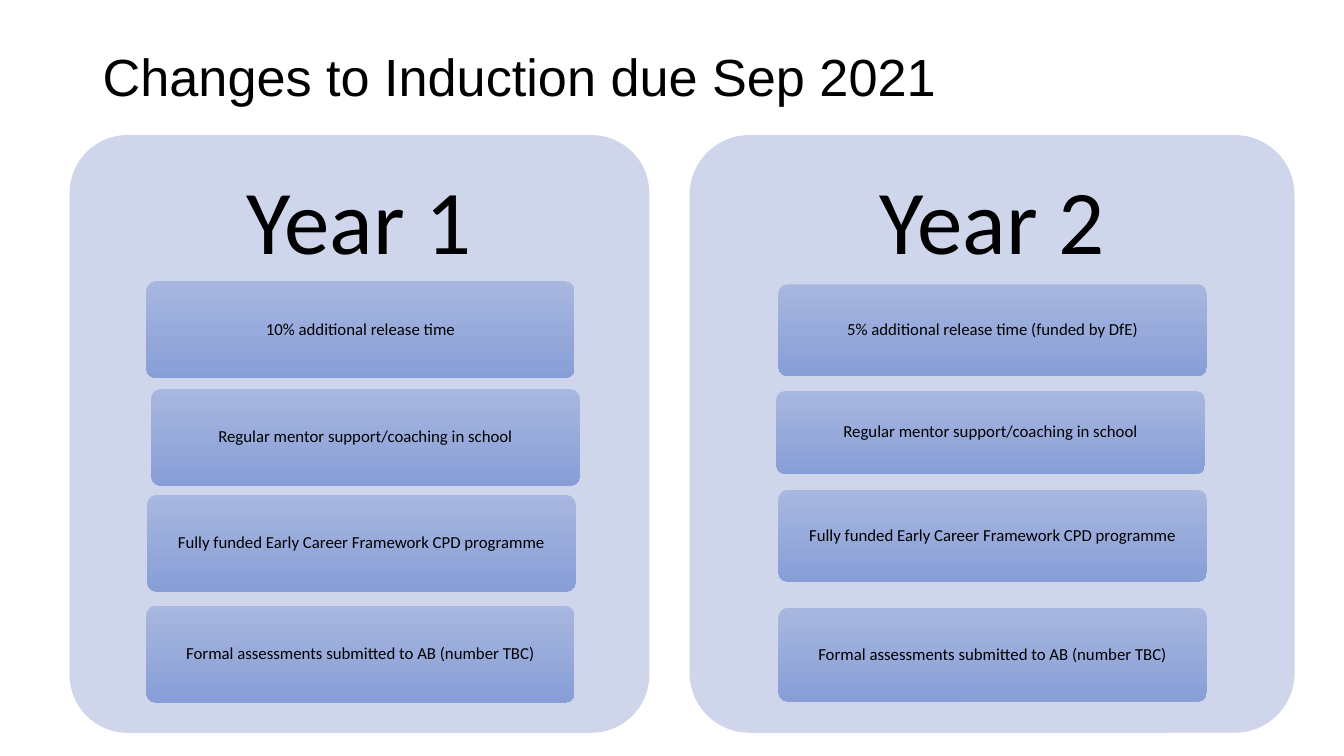
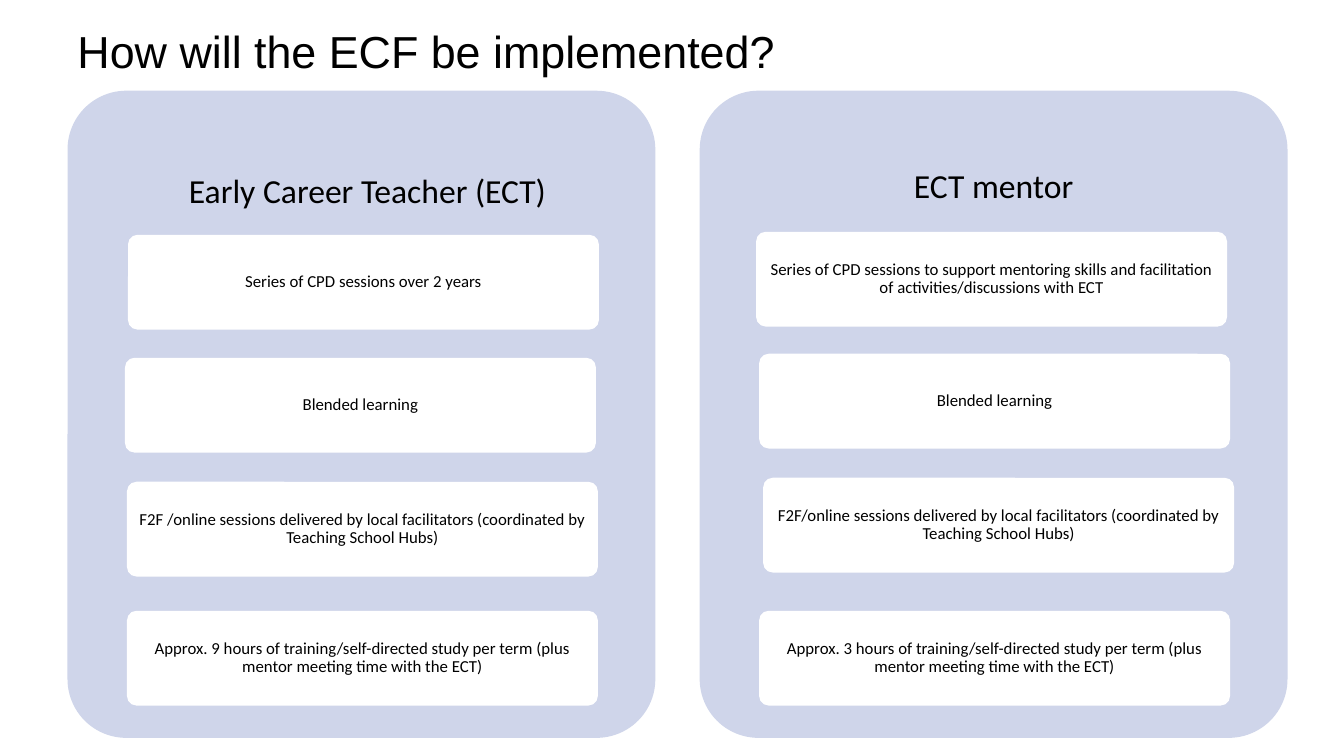
from pptx import Presentation
from pptx.dml.color import RGBColor
from pptx.enum.shapes import MSO_SHAPE
from pptx.enum.text import MSO_ANCHOR, PP_ALIGN
from pptx.util import Emu, Pt

PX = 9144  # 100 px to the inch
WIDE, HIGH = 1333, 750
HEX = {"ink": "000000", "panel": "CFD5EA", "white": "FFFFFF",
       "light": "A8B7DF", "deep": "889ED7"}

# Boxes are left, top, width, height; cards are left, top, height, text
SLIDES = [
    {"title": "Changes to Induction due Sep 2021",
     "box": (92, 40, 1150, 77), "size": 37.3,
     "fill": ("light", "deep"), "width": 425, "head": 65, "drop": 178,
     "panels": [
         {"name": "Year 1", "box": (69, 134, 575, 593), "shift": (0, 0),
          "cards": [
              (145, 279, 96, "10% additional release time"),
              (150, 386, 96, "Regular mentor support/coaching in school"),
              (146, 491, 96, "Fully funded Early Career Framework CPD programme"),
              (145, 601, 96, "Formal assessments submitted to AB (number TBC)")]},
         {"name": "Year 2", "box": (684, 134, 600, 593), "shift": (0, 0),
          "cards": [
              (772, 282, 91, "5% additional release time (funded by DfE)"),
              (770, 388, 82, "Regular mentor support/coaching in school"),
              (772, 486, 91, "Fully funded Early Career Framework CPD programme"),
              (772, 603, 93, "Formal assessments submitted to AB (number TBC)")]}]},
    {"title": "How will the ECF be implemented?",
     "box": (67, 18, 936, 72), "size": 32,
     "fill": ("white",), "width": 467, "head": 24, "drop": 193,
     "panels": [
         {"name": "Early Career Teacher (ECT)", "box": (67, 90, 583, 642),
          "shift": (6, 5),
          "cards": [
              (127, 233, 94, "Series of CPD sessions over 2 years"),
              (124, 355, 94, "Blended learning"),
              (126, 478, 94, "F2F /online sessions delivered by local facilitators "
               "(coordinated by Teaching School Hubs)"),
              (126, 606, 94, "Approx. 9 hours of training/self-directed study per term "
               "(plus mentor meeting time with the ECT)")]},
         {"name": "ECT mentor", "box": (694, 90, 583, 642), "shift": (0, 0),
          "cards": [
              (750, 230, 94, "Series of CPD sessions to support mentoring skills and "
               "facilitation of activities/discussions with ECT"),
              (753, 351, 94, "Blended learning"),
              (757, 474, 94, "F2F/online sessions delivered by local facilitators "
               "(coordinated by Teaching School Hubs)"),
              (753, 606, 94, "Approx. 3 hours of training/self-directed study per term "
               "(plus mentor meeting time with the ECT)")]}]},
]


def paint(name):
    return RGBColor.from_string(HEX[name])


def place(box):
    return [Emu(n * PX) for n in box]


def write(shape, text, size, font="Calibri", align=PP_ALIGN.CENTER, inset=(3, 3)):
    frame = shape.text_frame
    frame.word_wrap = True
    frame.vertical_anchor = MSO_ANCHOR.MIDDLE
    frame.margin_left = frame.margin_right = Emu(inset[0] * PX)
    frame.margin_top = frame.margin_bottom = Emu(inset[1] * PX)
    para = frame.paragraphs[0]
    para.alignment = align
    para.line_spacing = 0.9
    run = para.add_run()
    run.text = text
    run.font.name = font
    run.font.size = Pt(size)
    run.font.color.rgb = paint("ink")


def block(slide, box, fill):
    """Round box with one flat colour or a gradient from top to bottom."""
    shape = slide.shapes.add_shape(MSO_SHAPE.ROUNDED_RECTANGLE, *place(box))
    shape.adjustments[0] = 0.1
    shape.shadow.inherit = False
    shape.line.fill.background()
    if len(fill) == 1:
        shape.fill.solid()
        shape.fill.fore_color.rgb = paint(fill[0])
    else:
        shape.fill.gradient()
        shape.fill.gradient_angle = 270
        for stop, name in zip(shape.fill.gradient_stops, fill):
            stop.color.rgb = paint(name)
    return shape


def build(slide, data):
    # Title
    title = slide.shapes.add_textbox(*place(data["box"]))
    write(title, data["title"], data["size"], font="Arial",
          align=PP_ALIGN.LEFT, inset=(10, 5))
    for panel in data["panels"]:
        # Panel and its heading
        left, top, width, _ = panel["box"]
        block(slide, panel["box"], ("panel",))
        right, down = panel["shift"]
        area = (left + right, top + down, width, data["drop"])
        write(slide.shapes.add_textbox(*place(area)), panel["name"],
              data["head"], inset=(10, 10))
        # Cards
        for x, y, high, text in panel["cards"]:
            card = block(slide, (x, y, data["width"], high), data["fill"])
            write(card, text, 12)


def main():
    deck = Presentation()
    deck.slide_width, deck.slide_height = place((WIDE, HIGH))
    for data in SLIDES:
        build(deck.slides.add_slide(deck.slide_layouts[6]), data)
    deck.save("out.pptx")


if __name__ == "__main__":
    main()
